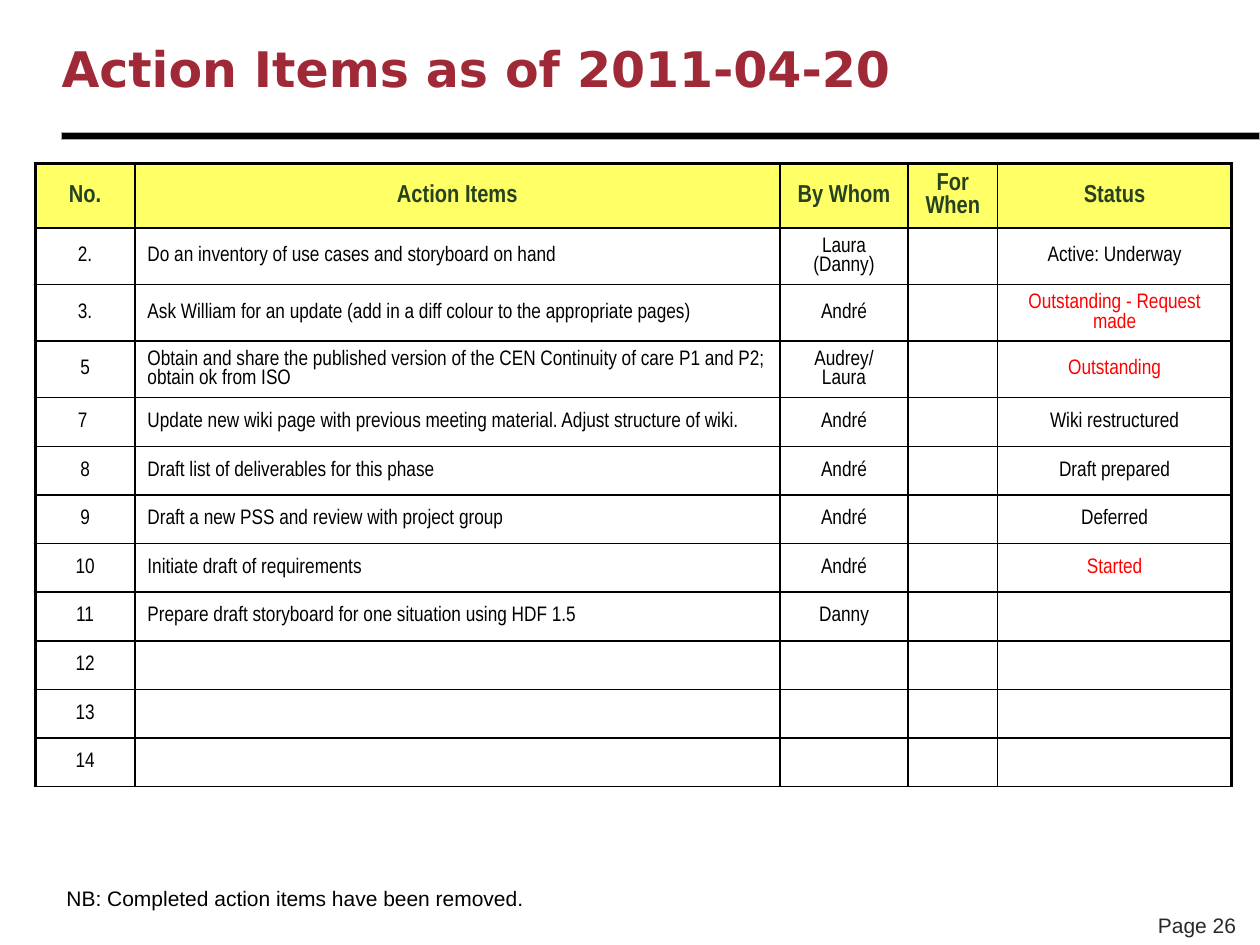
"""Build the action items slide with its status table."""
from lxml import etree
from pptx import Presentation
from pptx.dml.color import RGBColor
from pptx.enum.shapes import MSO_SHAPE
from pptx.enum.text import MSO_ANCHOR, MSO_AUTO_SIZE, PP_ALIGN
from pptx.oxml.ns import qn
from pptx.util import Cm, Pt

LEFT, CENTER, RIGHT = PP_ALIGN.LEFT, PP_ALIGN.CENTER, PP_ALIGN.RIGHT
MIDDLE, BOTTOM, TOP = MSO_ANCHOR.MIDDLE, MSO_ANCHOR.BOTTOM, MSO_ANCHOR.TOP
FIT_SHAPE = MSO_AUTO_SIZE.SHAPE_TO_FIT_TEXT
RECTANGLE = MSO_SHAPE.RECTANGLE

COLORS = {
    "title": "9F2936", "black": "000000", "bar_edge": "ADADAD",
    "header_fill": "FFFF66", "header_text": "274221",
    "alert": "FF0000", "page": "292929",
}
FORMATS = {
    "title": {"name": "DejaVu Sans", "size": Pt(28), "bold": True},
    "header": {"name": "Arial Narrow", "size": Pt(14), "bold": True},
    "body": {"name": "Arial Narrow", "size": Pt(12), "bold": False},
    "note": {"name": "Arial", "size": Pt(12), "bold": False},
}
HEADERS = ["No.", "Action Items", "By Whom", "For When", "Status"]
ACTIONS = [
    ["2.", "Do an inventory of use cases and storyboard on hand", "Laura (Danny)", "", "Active: Underway"],
    ["3.", "Ask William for an update (add in a diff colour to the appropriate pages)", "André", "",
     "Outstanding - Request made"],
    ["5", "Obtain and share the published version of the CEN Continuity of care P1 and P2; obtain ok from ISO",
     "Audrey/Laura", "", "Outstanding"],
    ["7 ", "Update new wiki page with previous meeting material. Adjust structure of wiki.", "André", "",
     "Wiki restructured"],
    ["8", "Draft list of deliverables for this phase", "André", "", "Draft prepared"],
    ["9", "Draft a new PSS and review with project group", "André", "", "Deferred"],
    ["10", "Initiate draft of requirements", "André", "", "Started"],
    ["11", "Prepare draft storyboard for one situation using HDF 1.5", "Danny", "", ""],
    ["12", "", "", "", ""],
    ["13", "", "", "", ""],
    ["14", "", "", "", ""],
]
ALERTS = ("Outstanding", "Started")
COLUMN_WIDTHS = [2.01, 13, 2.59, 1.8, 4.72]
ROW_HEIGHTS = [1.3] + [1.14] * 3 + [0.98] * 8


def write_text(frame, text, style, color, alignment):
    paragraph = frame.paragraphs[0]
    paragraph.alignment = alignment
    run = paragraph.add_run()
    run.text = text
    for attribute, value in FORMATS[style].items():
        setattr(run.font, attribute, value)
    run.font.color.rgb = RGBColor.from_string(COLORS[color])
    return paragraph


def draw_borders(cell, widths):
    properties = cell._tc.get_or_add_tcPr()
    for index, (side, width) in enumerate(widths.items()):
        line = etree.Element(qn(f"a:ln{side}"), w=str(Pt(width)))
        fill = etree.SubElement(line, qn("a:solidFill"))
        etree.SubElement(fill, qn("a:srgbClr"), val=COLORS["black"])
        properties.insert(index, line)


presentation = Presentation()
presentation.slide_width, presentation.slide_height = Cm(25.4), Cm(19.05)
slide = presentation.slides.add_slide(presentation.slide_layouts[5])

bar = slide.shapes.add_shape(RECTANGLE, Cm(1.24), Cm(2.67), Cm(24.16), Cm(0.15))
bar.shadow.inherit = False
bar.fill.solid()
bar.fill.fore_color.rgb = RGBColor.from_string(COLORS["black"])
bar.line.color.rgb = RGBColor.from_string(COLORS["bar_edge"])
bar.line.width = Pt(0.75)

title = slide.shapes.title
title.left, title.top, title.width, title.height = Cm(1.24), Cm(0.33), Cm(21.59), Cm(2.08)
title_format = {
    "margin_left": 0, "margin_right": 0, "margin_top": 0, "margin_bottom": 0,
    "vertical_anchor": MIDDLE, "auto_size": MSO_AUTO_SIZE.NONE, "word_wrap": True,
}
for attribute, value in title_format.items():
    setattr(title.text_frame, attribute, value)
write_text(title.text_frame, "Action Items as of 2011-04-20", "title", "title", LEFT)

table = slide.shapes.add_table(
    len(ROW_HEIGHTS), len(COLUMN_WIDTHS), Cm(0.71), Cm(3.3),
    Cm(sum(COLUMN_WIDTHS)), Cm(sum(ROW_HEIGHTS))).table
table.first_row = table.horz_banding = False
for column, width in zip(table.columns, COLUMN_WIDTHS):
    column.width = Cm(width)
for row, height in zip(table.rows, ROW_HEIGHTS):
    row.height = Cm(height)

for row_index, texts in enumerate([HEADERS] + ACTIONS):
    is_header = row_index == 0
    style = "header" if is_header else "body"
    for column_index, text in enumerate(texts):
        cell = table.cell(row_index, column_index)
        cell.vertical_anchor = MIDDLE
        if is_header:
            cell.fill.solid()
            cell.fill.fore_color.rgb = RGBColor.from_string(COLORS["header_fill"])
        else:
            cell.fill.background()
        draw_borders(cell, {
            "L": 2.25 if column_index == 0 else 1,
            "R": 2.25 if column_index == len(HEADERS) - 1 else 1,
            "T": 2.25 if is_header else 1,
            "B": 1,
        })
        if not text:
            cell.text_frame.paragraphs[0]._p.get_or_add_endParaRPr().set("sz", "1200")
            continue
        color = "header_text" if is_header else "alert" if text.startswith(ALERTS) else "black"
        alignment = LEFT if column_index == 1 and not is_header else CENTER
        paragraph = write_text(cell.text_frame, text, style, color, alignment)
        paragraph.space_before = Pt(FORMATS[style]["size"].pt * 0.2)

for text, left, top, width, wrap, anchor, color, alignment in [
    ("Page 26", 22.4, 18.26, 2.77, True, BOTTOM, "page", RIGHT),
    ("NB: Completed action items have been removed.", 1.09, 17.73, 9.8, False, TOP, "black", LEFT),
]:
    frame = slide.shapes.add_textbox(Cm(left), Cm(top), Cm(width), Cm(0.76)).text_frame
    frame.word_wrap = wrap
    frame.auto_size = FIT_SHAPE
    frame.vertical_anchor = anchor
    write_text(frame, text, "note", color, alignment)

presentation.save("out.pptx")
